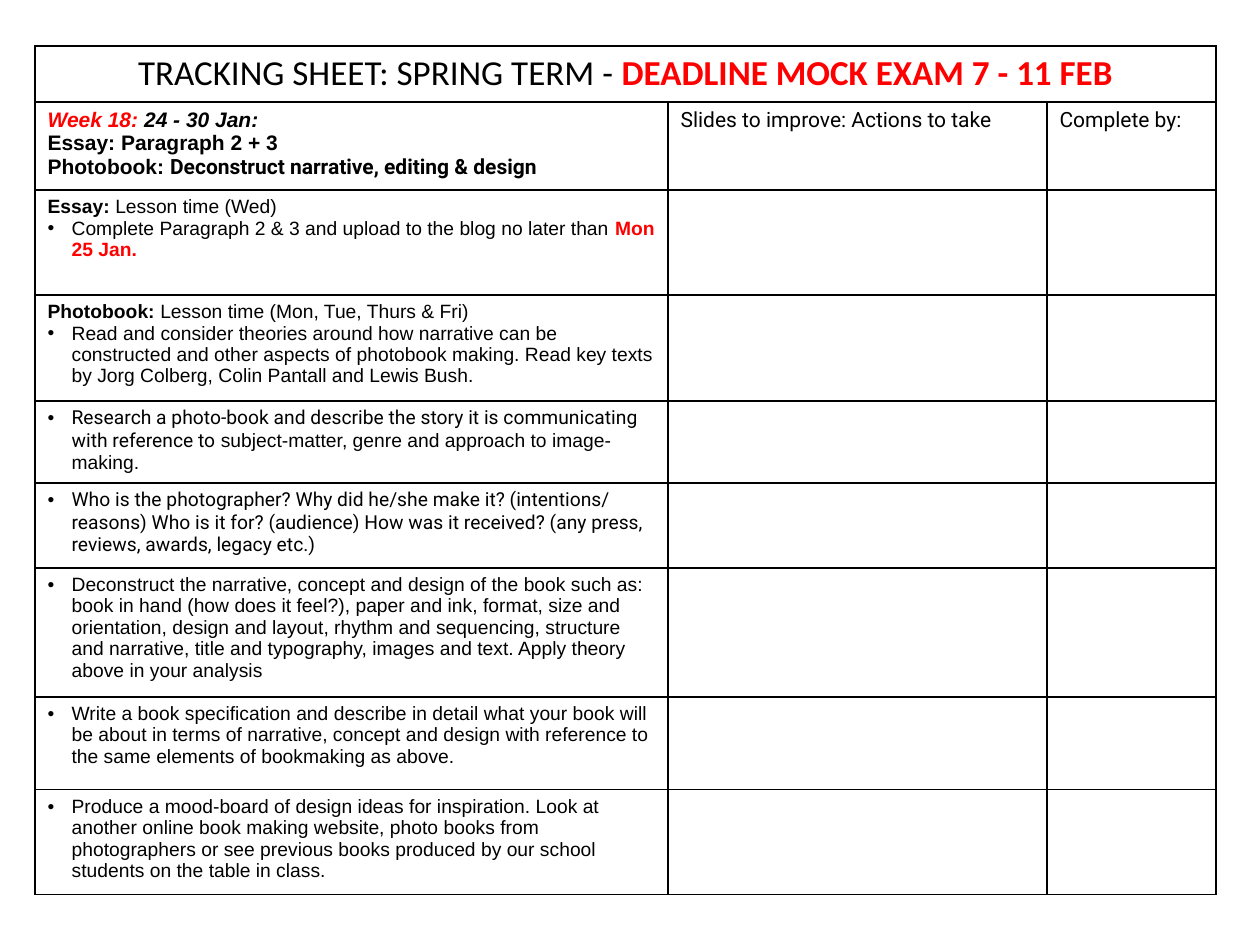
from lxml.etree import SubElement
from pptx import Presentation
from pptx.dml.color import RGBColor
from pptx.enum.text import PP_ALIGN
from pptx.oxml.ns import qn
from pptx.util import Pt

PX = 914400 / 126
COLORS = {"ink": "000000", "alert": "FF0000"}
COLUMN_WIDTHS = [633, 379, 169]
ROW_HEIGHTS = [56, 88, 105, 106, 82, 85, 129, 93, 105]
INDENT = 24


def px(length):
    return round(length * PX)


def write(paragraph, text, size=11, font="Arial", color="ink", bold=False, italic=False):
    """Add one run to the paragraph."""
    run = paragraph.add_run()
    run.text = text
    run.font.size = Pt(size)
    run.font.name = font
    run.font.bold = bold
    run.font.italic = italic
    run.font.color.rgb = RGBColor.from_string(COLORS[color])


prs = Presentation()
prs.slide_width, prs.slide_height = px(1260), px(945)
slide = prs.slides.add_slide(prs.slide_layouts[6])

tracker = slide.shapes.add_table(
    len(ROW_HEIGHTS), len(COLUMN_WIDTHS), px(35), px(46),
    px(sum(COLUMN_WIDTHS)), px(sum(ROW_HEIGHTS))).table
tracker.first_row = False
tracker.horz_banding = False
for column, width in zip(tracker.columns, COLUMN_WIDTHS):
    column.width = px(width)
for row, height in zip(tracker.rows, ROW_HEIGHTS):
    row.height = px(height)

# Black rules around every cell
for cell in tracker.iter_cells():
    properties = cell._tc.get_or_add_tcPr()
    for side in ("a:lnL", "a:lnR", "a:lnT", "a:lnB"):
        border = SubElement(properties, qn(side), w=str(Pt(1)))
        line_fill = SubElement(border, qn("a:solidFill"))
        SubElement(line_fill, qn("a:srgbClr"), val=COLORS["ink"])
    cell.fill.background()

# Title row
tracker.cell(0, 0).merge(tracker.cell(0, 2))
title = tracker.cell(0, 0).text_frame.paragraphs[0]
title.alignment = PP_ALIGN.CENTER
write(title, "TRACKING SHEET: SPRING TERM - ", 20, "Calibri")
write(title, "DEADLINE MOCK EXAM 7 - 11 FEB", 20, "Calibri", "alert", bold=True)

# Heading row
week = tracker.cell(1, 0).text_frame.paragraphs[0]
write(week, "Week 18: ", 12, color="alert", bold=True, italic=True)
write(week, "24 - 30 Jan:", 12, bold=True, italic=True)
week.add_line_break()
write(week, "Essay: Paragraph 2 + 3", 12, bold=True)
week.add_line_break()
write(week, "Photobook: ", 12, bold=True)
write(week, "Deconstruct narrative, editing & design", 12, "Roboto", bold=True)
for index, heading in enumerate(["Slides to improve: Actions to take", "Complete by:"], 1):
    write(tracker.cell(1, index).text_frame.paragraphs[0], heading, 12, "Roboto")

# Task rows: optional (subject, lesson time), then the bullet as (text, style) runs
ROBOTO = {"font": "Roboto"}
tasks = [
    (("Essay: ", "Lesson time (Wed)"),
     [("Complete Paragraph 2 & 3 and upload to the blog no later than ", {}),
      ("Mon 25 Jan.", {"color": "alert", "bold": True})]),
    (("Photobook: ", "Lesson time (Mon, Tue, Thurs & Fri)"),
     [("Read and consider theories around how narrative can be constructed and other "
       "aspects of photobook making. Read key texts by Jorg Colberg, Colin Pantall and "
       "Lewis Bush.", {})]),
    (None,
     [("Research a photo-book and describe the story it is communicating with reference to",
       ROBOTO),
      (" subject-matter, genre and approach to image-making.", {})]),
    (None,
     [("Who is the photographer? Why did he/she make it? (intentions/ reasons) Who is it "
       "for? (audience) How was it received? (any press, reviews, awards, legacy etc.)",
       ROBOTO)]),
    (None,
     [("Deconstruct the narrative, concept and design of the book such as: book in hand "
       "(how does it feel?), paper and ink, format, size and orientation, design and "
       "layout, rhythm and sequencing, structure and narrative, title and typography, "
       "images and text. Apply theory above in your analysis", {})]),
    (None,
     [("Write a book specification and describe in detail what your book will be about in "
       "terms of narrative, concept and design with reference to the same elements of "
       "bookmaking as above.", {})]),
    (None,
     [("Produce a mood-board of design ideas for inspiration. Look at another online book "
       "making website, photo books from photographers or see previous books produced by "
       "our school students on the table in class.", {})]),
]
for row_index, (lesson, bullet_runs) in enumerate(tasks, 2):
    frame = tracker.cell(row_index, 0).text_frame
    bullet = frame.paragraphs[0]
    if lesson:
        subject, lesson_time = lesson
        write(bullet, subject, bold=True)
        write(bullet, lesson_time)
        bullet = frame.add_paragraph()
    layout = bullet._p.get_or_add_pPr()
    layout.set("marL", str(px(INDENT)))
    layout.set("indent", str(-px(INDENT)))
    SubElement(layout, qn("a:buFont"), typeface="Arial")
    SubElement(layout, qn("a:buChar"), char="•")
    for text, style in bullet_runs:
        write(bullet, text, **style)

prs.save("out.pptx")
